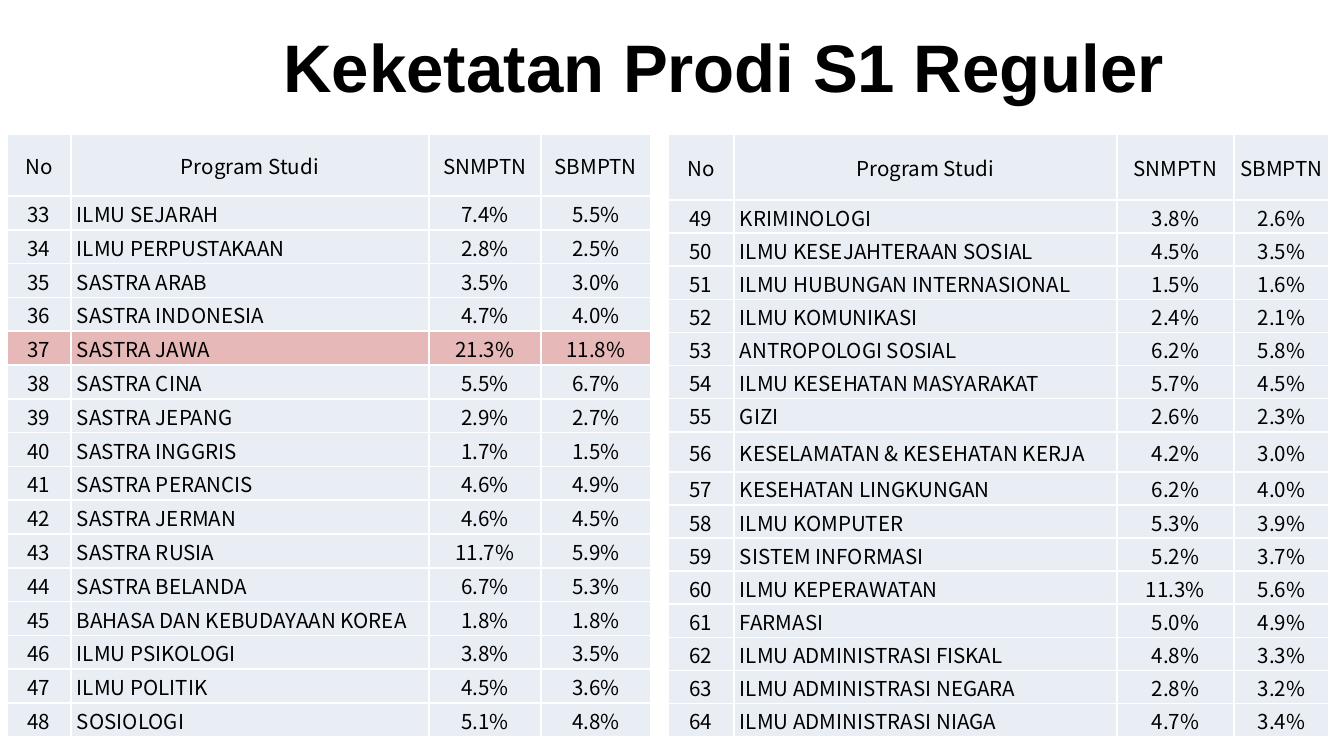
from lxml import etree
from pptx import Presentation
from pptx.dml.color import RGBColor
from pptx.enum.text import MSO_ANCHOR, PP_ALIGN
from pptx.oxml import parse_xml
from pptx.oxml.ns import nsdecls
from pptx.util import Pt

# Content
TITLE = "Keketatan Prodi S1 Reguler"
HEAD = ("No", "Program Studi", "SNMPTN", "SBMPTN")
FIRST = 33
MARKED = {37}
LEFT = [
    ("ILMU SEJARAH", "7.4%", "5.5%"),
    ("ILMU PERPUSTAKAAN", "2.8%", "2.5%"),
    ("SASTRA ARAB", "3.5%", "3.0%"),
    ("SASTRA INDONESIA", "4.7%", "4.0%"),
    ("SASTRA JAWA", "21.3%", "11.8%"),
    ("SASTRA CINA", "5.5%", "6.7%"),
    ("SASTRA JEPANG", "2.9%", "2.7%"),
    ("SASTRA INGGRIS", "1.7%", "1.5%"),
    ("SASTRA PERANCIS", "4.6%", "4.9%"),
    ("SASTRA JERMAN", "4.6%", "4.5%"),
    ("SASTRA RUSIA", "11.7%", "5.9%"),
    ("SASTRA BELANDA", "6.7%", "5.3%"),
    ("BAHASA DAN KEBUDAYAAN KOREA", "1.8%", "1.8%"),
    ("ILMU PSIKOLOGI", "3.8%", "3.5%"),
    ("ILMU POLITIK", "4.5%", "3.6%"),
    ("SOSIOLOGI", "5.1%", "4.8%"),
]
RIGHT = [
    ("KRIMINOLOGI", "3.8%", "2.6%"),
    ("ILMU KESEJAHTERAAN SOSIAL", "4.5%", "3.5%"),
    ("ILMU HUBUNGAN INTERNASIONAL", "1.5%", "1.6%"),
    ("ILMU KOMUNIKASI", "2.4%", "2.1%"),
    ("ANTROPOLOGI SOSIAL", "6.2%", "5.8%"),
    ("ILMU KESEHATAN MASYARAKAT", "5.7%", "4.5%"),
    ("GIZI", "2.6%", "2.3%"),
    ("KESELAMATAN & KESEHATAN KERJA", "4.2%", "3.0%"),
    ("KESEHATAN LINGKUNGAN", "6.2%", "4.0%"),
    ("ILMU KOMPUTER", "5.3%", "3.9%"),
    ("SISTEM INFORMASI", "5.2%", "3.7%"),
    ("ILMU KEPERAWATAN", "11.3%", "5.6%"),
    ("FARMASI", "5.0%", "4.9%"),
    ("ILMU ADMINISTRASI FISKAL", "4.8%", "3.3%"),
    ("ILMU ADMINISTRASI NEGARA", "2.8%", "3.2%"),
    ("ILMU ADMINISTRASI NIAGA", "4.7%", "3.4%"),
]
# Left edge, column widths and special row heights (0 is the header), in px
TABLES = [
    (LEFT, 7, (64, 358, 112, 110), {0: 62}),
    (RIGHT, 668, (66, 383, 117, 95), {0: 66, 8: 40}),
]
TOP, TALL = 134, 603


def px(n):
    return round(n * 914400 / 134.4)


def color(text):
    return RGBColor.from_string(text)


def style(par, name, size, bold=False):
    par.font.name = name
    par.font.size = Pt(size)
    par.font.bold = bold
    par.font.color.rgb = color("000000")


def border(cell):
    props = cell._tc.get_or_add_tcPr()
    for i, side in enumerate("LRTB"):
        line = parse_xml(f'<a:ln{side} {nsdecls("a")} w="12700"><a:solidFill>'
                         f'<a:srgbClr val="FFFFFF"/></a:solidFill></a:ln{side}>')
        props.insert(i, line)


def fill_cell(cell, text, fill, left):
    cell.text = text
    cell.vertical_anchor = MSO_ANCHOR.MIDDLE
    cell.margin_left = px(6 if left else 1)
    cell.margin_right = cell.margin_top = px(1)
    cell.margin_bottom = 0
    cell.fill.solid()
    cell.fill.fore_color.rgb = color(fill)
    border(cell)
    par = cell.text_frame.paragraphs[0]
    par.alignment = PP_ALIGN.LEFT if left else PP_ALIGN.CENTER
    style(par, "Noto Sans CJK KR", 11)


def add_list(slide, data, first, x, widths, special):
    rows = [HEAD] + [(str(no), *row) for no, row in enumerate(data, first)]
    table = slide.shapes.add_table(len(rows), len(HEAD), px(x), px(TOP),
                                   px(sum(widths)), px(TALL)).table
    # Ordinary rows share the height the special ones leave
    plain = (TALL - sum(special.values())) / (len(rows) - len(special))
    for col, width in zip(table.columns, widths):
        col.width = px(width)
    for r, row in enumerate(rows):
        table.rows[r].height = px(special.get(r, plain))
        marked = r > 0 and int(row[0]) in MARKED
        for c, text in enumerate(row):
            fill_cell(table.cell(r, c), text, "E6B9B8" if marked else "E9EDF4",
                      left=r > 0 and c == 1)


def main():
    deck = Presentation()
    deck.slide_width, deck.slide_height = px(1344), px(756)
    slide = deck.slides.add_slide(deck.slide_layouts[5])

    # Title
    title = slide.shapes.title
    title.left, title.top, title.width, title.height = map(px, (142, 27, 1164, 77))
    title.text = TITLE
    title.text_frame.vertical_anchor = MSO_ANCHOR.MIDDLE
    par = title.text_frame.paragraphs[0]
    par.alignment = PP_ALIGN.CENTER
    style(par, "Arial", 36, True)

    # Two lists side by side, numbered on from one to the next
    first = FIRST
    for data, x, widths, special in TABLES:
        add_list(slide, data, first, x, widths, special)
        first += len(data)
    deck.save("out.pptx")


if __name__ == "__main__":
    main()
